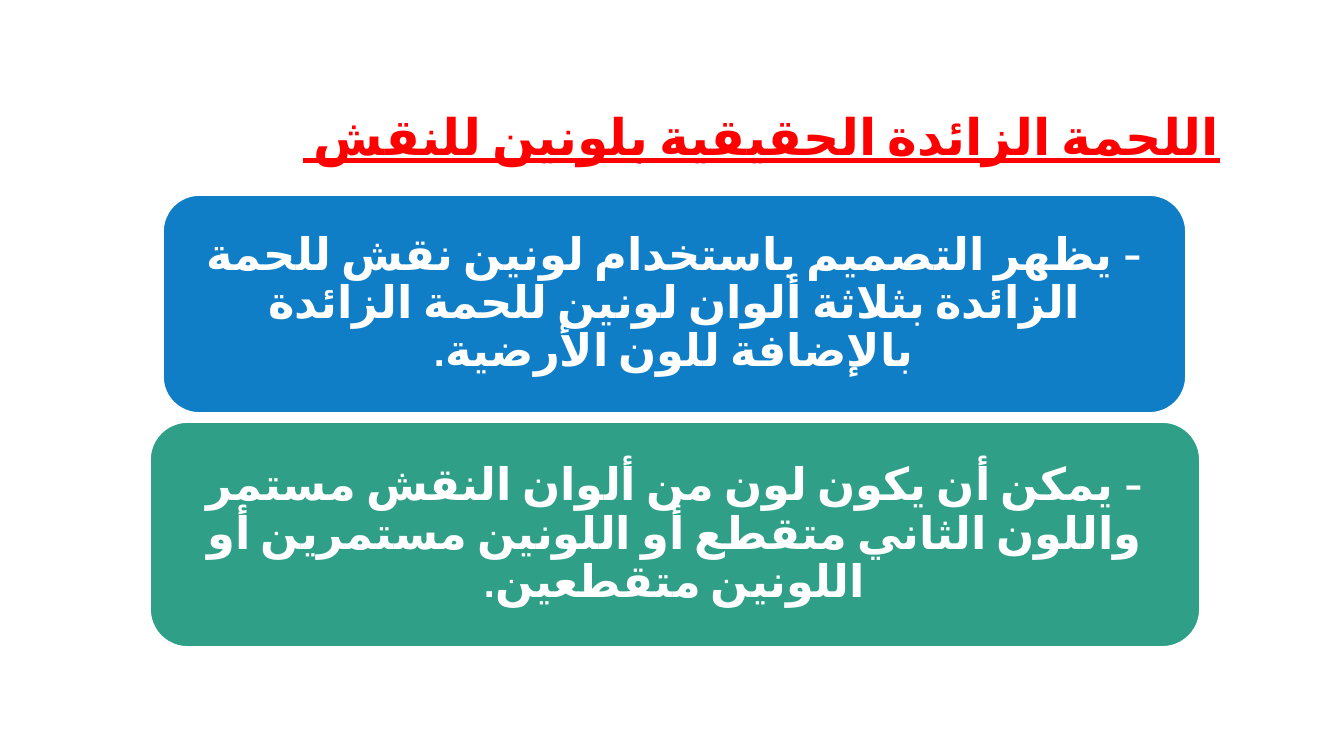
from lxml import etree
from pptx import Presentation
from pptx.dml.color import RGBColor
from pptx.enum.shapes import MSO_SHAPE
from pptx.enum.text import MSO_ANCHOR, MSO_AUTO_SIZE, PP_ALIGN
from pptx.oxml.ns import qn
from pptx.util import Emu, Pt

ROUNDED = MSO_SHAPE.ROUNDED_RECTANGLE
MIDDLE = MSO_ANCHOR.MIDDLE
NO_FIT = MSO_AUTO_SIZE.NONE
RIGHT, CENTER = PP_ALIGN.RIGHT, PP_ALIGN.CENTER
COLORS = {"title": "FF0000", "blue": "107EC6", "green": "2FA087", "white": "FFFFFF"}
W, H = 1344, 756
INSET = 24


def px(n):
    return Emu(round(n * 12192000 / W))


def write_arabic(tf, text, align, font, size, color):
    """Fill a text frame with one bold right-to-left paragraph."""
    tf.word_wrap = True
    tf.auto_size = NO_FIT
    tf.vertical_anchor = MIDDLE
    p = tf.paragraphs[0]
    p.alignment = align
    p.line_spacing = 0.9
    p._p.get_or_add_pPr().set("rtl", "1")
    r = p.add_run()
    r.text = text
    r.font.name = font
    r.font.size = Pt(size)
    r.font.bold = True
    r.font.color.rgb = RGBColor.from_string(COLORS[color])
    rPr = r._r.get_or_add_rPr()
    rPr.set("lang", "ar-SA")
    etree.SubElement(rPr, qn("a:cs")).set("typeface", font)
    return p, r


prs = Presentation()
prs.slide_width, prs.slide_height = px(W), px(H)
s = prs.slides.add_slide(prs.slide_layouts[5])

title = s.shapes.title
title.left, title.top, title.width, title.height = px(249), px(83), px(981), px(113)
p, r = write_arabic(title.text_frame, "اللحمة الزائدة الحقيقية بلونين للنقش ",
                    RIGHT, "Calibri", 36, "title")
r.font.underline = True

panels = [
    (163, 195, 1023, 218, "blue",
     "- يظهر التصميم باستخدام لونين نقش للحمة الزائدة بثلاثة ألوان لونين "
     "للحمة الزائدة بالإضافة للون الأرضية."),
    (150, 422, 1050, 225, "green",
     "- يمكن أن يكون لون من ألوان النقش مستمر واللون الثاني متقطع "
     "أو اللونين مستمرين أو اللونين متقطعين."),
]
for x, y, w, h, color, text in panels:
    sp = s.shapes.add_shape(ROUNDED, px(x), px(y), px(w), px(h))
    sp.shadow.inherit = False
    sp.fill.solid()
    sp.fill.fore_color.rgb = RGBColor.from_string(COLORS[color])
    sp.line.color.rgb = RGBColor.from_string(COLORS["white"])
    sp.line.width = Pt(1.25)
    tf = sp.text_frame
    tf.margin_left = tf.margin_right = tf.margin_top = tf.margin_bottom = px(INSET)
    p, r = write_arabic(tf, text, CENTER, "Cabin", 32, "white")
    p.space_after = Pt(11)

prs.save("out.pptx")
